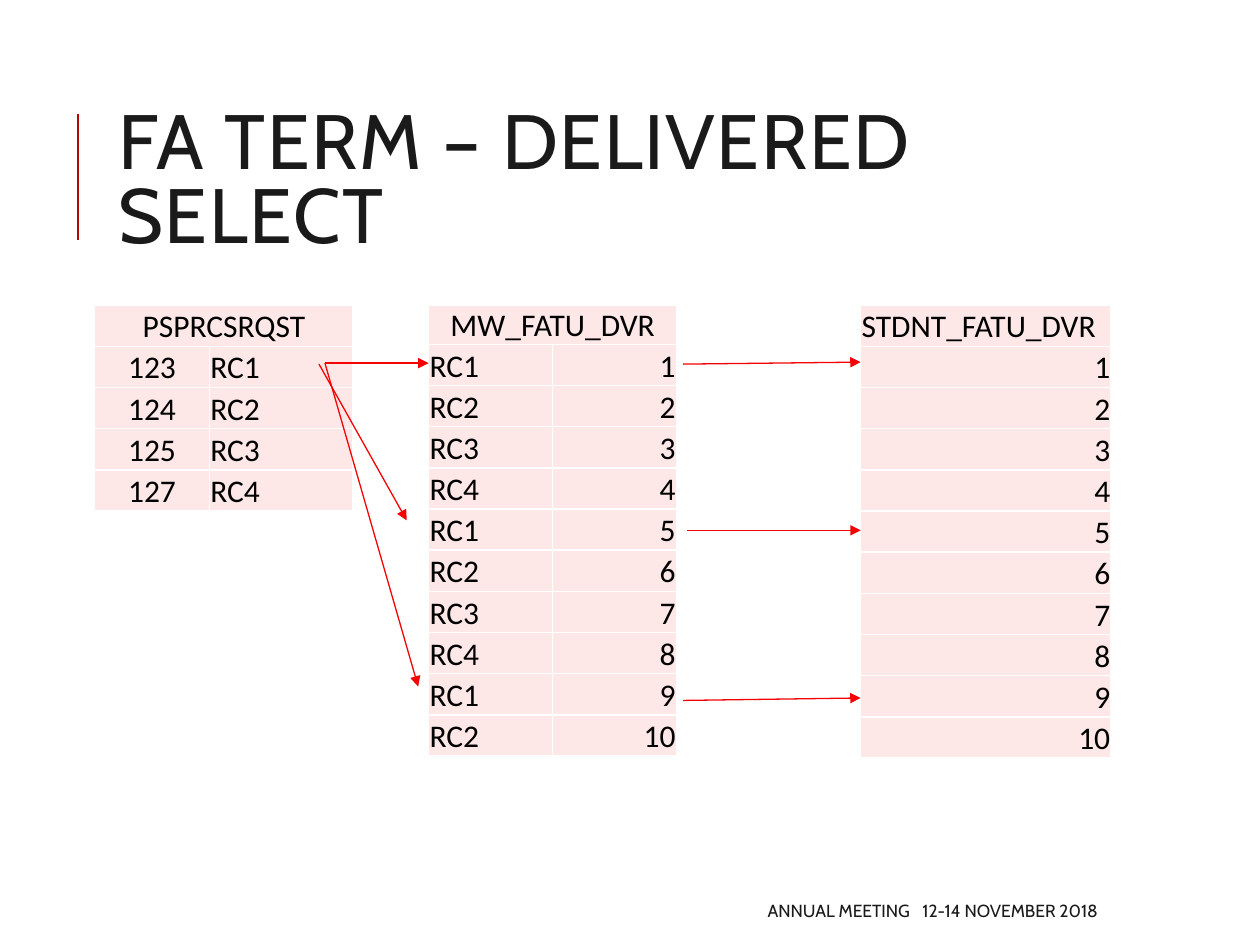
from dataclasses import dataclass

from lxml import etree
from pptx import Presentation
from pptx.dml.color import RGBColor
from pptx.enum.shapes import MSO_CONNECTOR
from pptx.enum.text import MSO_ANCHOR, MSO_AUTO_SIZE, PP_ALIGN
from pptx.oxml.ns import qn
from pptx.util import Cm, Pt

LEFT, MID, RIGHT = PP_ALIGN.LEFT, PP_ALIGN.CENTER, PP_ALIGN.RIGHT
MIDDLE, BOTTOM = MSO_ANCHOR.MIDDLE, MSO_ANCHOR.BOTTOM
NO_FIT = MSO_AUTO_SIZE.NONE
STRAIGHT = MSO_CONNECTOR.STRAIGHT
TITLE_ONLY = 5


@dataclass(frozen=True)
class Theme:
    ink: str = "1A1A1A"
    black: str = "000000"
    rule: str = "B40404"
    arrow: str = "F30303"
    cell: str = "FDE7E7"
    edge: str = "FFFFFF"
    head: str = "Cabin"
    body: str = "Calibri"
    title: int = 44
    data: int = 18
    foot: int = 10


THEME = Theme()
TOP, ROW = 6.15, 0.83  # shared table top and row height


def color(code):
    return RGBColor.from_string(code)


def style(par, face, size, ink, align=LEFT):
    par.alignment = align
    par.font.name = face
    par.font.size = Pt(size)
    par.font.color.rgb = color(ink)


def track(run, points):
    """Set the letter spacing of a run."""
    run.font._element.set("spc", str(points * 100))


def add_title(slide, text):
    title = slide.shapes.title
    title.left, title.top = Cm(2.13), Cm(1.63)
    title.width, title.height = Cm(20.24), Cm(4.17)
    frame = title.text_frame
    frame.text = text
    frame.auto_size = NO_FIT
    frame.vertical_anchor = MIDDLE
    par = frame.paragraphs[0]
    style(par, THEME.head, THEME.title, THEME.ink)
    par.line_spacing = 0.8
    track(par.runs[0], 1)


def add_foot(slide, name, date):
    box = slide.shapes.add_textbox(Cm(10.08), Cm(17.98), Cm(12.3), Cm(0.76))
    frame = box.text_frame
    frame.word_wrap = True
    frame.vertical_anchor = MIDDLE
    par = frame.paragraphs[0]
    style(par, THEME.head, THEME.foot, THEME.ink, RIGHT)
    for text in (name, " ", date):
        par.add_run().text = text
    track(par.runs[1], 5)  # wide gap before the date


def add_line(slide, start, end, ink, width, tip=False):
    line = slide.shapes.add_connector(STRAIGHT, *map(Cm, start + end))
    line.line.color.rgb = color(ink)
    line.line.width = Pt(width)
    if tip:
        etree.SubElement(line.line._get_or_add_ln(), qn("a:tailEnd"), type="triangle")
    etree.SubElement(line._element.spPr, qn("a:effectLst"))


def add_edges(cell):
    props = cell._tc.get_or_add_tcPr()
    for spot, side in enumerate(("lnL", "lnR", "lnT", "lnB")):
        edge = etree.Element(qn("a:" + side), w=str(Pt(1)))
        fill = etree.SubElement(edge, qn("a:solidFill"))
        etree.SubElement(fill, qn("a:srgbClr"), val=THEME.edge)
        props.insert(spot, edge)


def fill_cell(cell, text, align):
    cell.fill.solid()
    cell.fill.fore_color.rgb = color(THEME.cell)
    cell.vertical_anchor = BOTTOM
    cell.margin_left = cell.margin_right = cell.margin_top = Cm(0.02)
    cell.margin_bottom = 0
    cell.text = text
    style(cell.text_frame.paragraphs[0], THEME.body, THEME.data, THEME.black, align)
    add_edges(cell)


def add_grid(slide, left, widths, name, rows, aligns, top_align=MID, top_row=ROW):
    """Draw a table with one name row across all columns."""
    count = len(widths)
    high = top_row + ROW * len(rows)
    frame = slide.shapes.add_table(
        len(rows) + 1, count, Cm(left), Cm(TOP), Cm(sum(widths)), Cm(high))
    table = frame.table
    table.first_row = table.horz_banding = False
    for col, width in zip(table.columns, widths):
        col.width = Cm(width)
    for row in table.rows:
        row.height = Cm(ROW)
    table.rows[0].height = Cm(top_row)
    if count > 1:
        table.cell(0, 0).merge(table.cell(0, count - 1))
    fill_cell(table.cell(0, 0), name, top_align)
    for r, row in enumerate(rows, 1):
        for c, text in enumerate(row):
            fill_cell(table.cell(r, c), text, aligns[c])


def main():
    deck = Presentation()
    deck.slide_width, deck.slide_height = Cm(25.4), Cm(19.05)
    slide = deck.slides.add_slide(deck.slide_layouts[TITLE_ONLY])

    # Title with its side rule, and footer
    add_line(slide, (1.57, 4.83), (1.57, 2.29), THEME.rule, 1.5)
    add_title(slide, "FA TERM – DELIVERED SELECT")
    add_foot(slide, "ANNUAL MEETING", "12-14 NOVEMBER 2018")

    # Tables: requests, mapping, students
    codes = ["RC1", "RC2", "RC3", "RC4"]
    nums = [str(n) for n in range(1, 11)]
    pairs = [(codes[i % len(codes)], num) for i, num in enumerate(nums)]
    add_grid(slide, 17.35, [5.05], "STDNT_FATU_DVR",
             [(num,) for num in nums], [RIGHT], top_align=LEFT)
    add_grid(slide, 1.91, [2.31, 2.9], "PSPRCSRQST",
             list(zip(["123", "124", "125", "127"], codes)), [MID, LEFT])
    add_grid(slide, 8.64, [2.5, 2.5], "MW_FATU_DVR",
             pairs, [LEFT, RIGHT], top_row=0.79)

    # Arrows from RC1 to its matches, then on to the students
    arrows = [
        ((6.55, 7.32), (8.64, 7.32)),
        ((6.43, 7.34), (8.2, 10.49)),
        ((6.55, 7.32), (8.43, 13.84)),
        ((13.77, 7.34), (17.35, 7.3)),
        ((13.84, 10.69), (17.35, 10.69)),
        ((13.77, 14.12), (17.35, 14.07)),
    ]
    for start, end in arrows:
        add_line(slide, start, end, THEME.arrow, 0.75, tip=True)

    deck.save("out.pptx")


if __name__ == "__main__":
    main()
